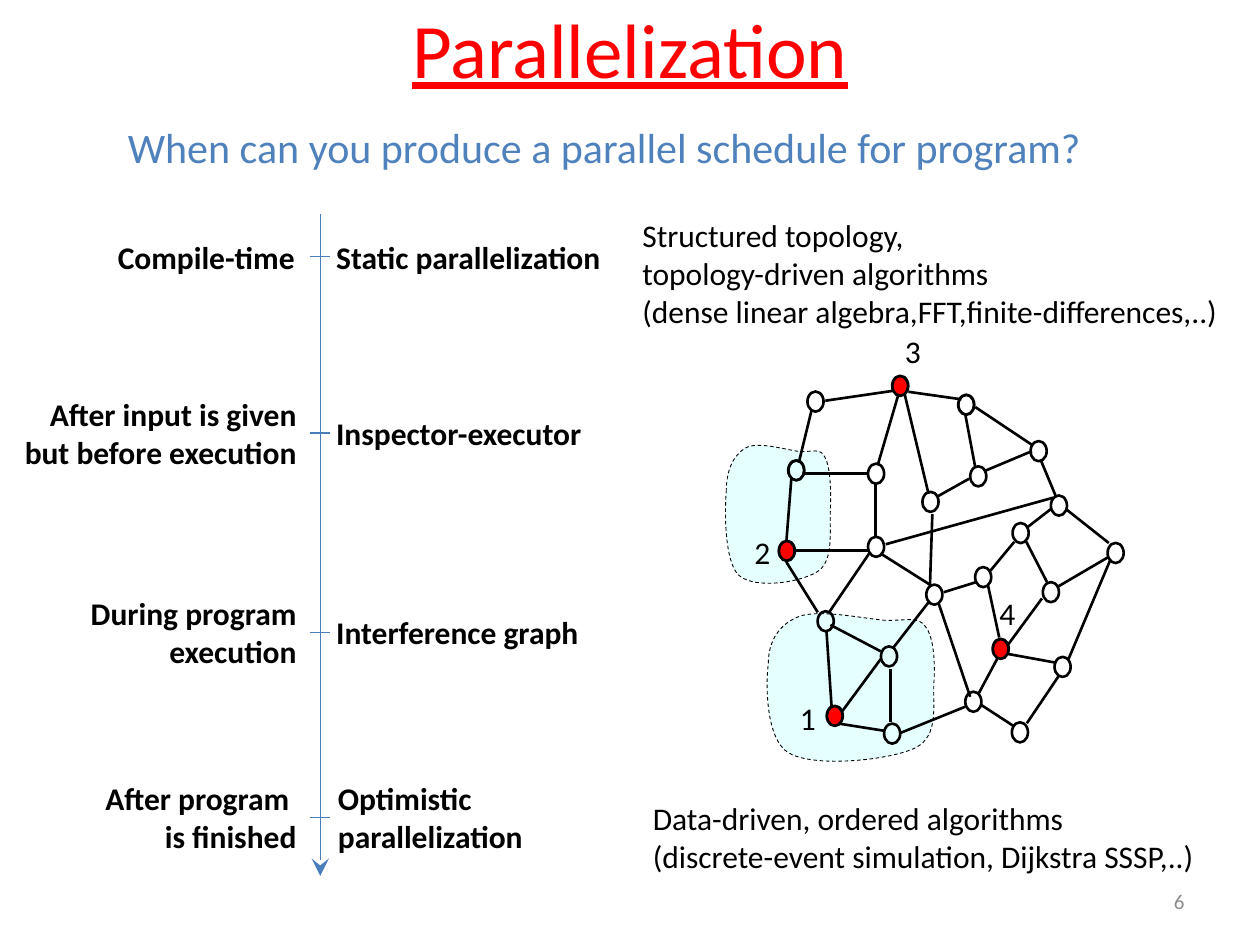
"""Build the slide that relates scheduling time to parallelization technique."""
from dataclasses import dataclass

from lxml import etree
from pptx import Presentation
from pptx.dml.color import RGBColor
from pptx.enum.dml import MSO_LINE
from pptx.enum.shapes import MSO_CONNECTOR, MSO_SHAPE
from pptx.enum.text import MSO_ANCHOR, MSO_AUTO_SIZE, PP_ALIGN
from pptx.oxml.ns import qn
from pptx.util import Pt

LEFT, CENTER, RIGHT = PP_ALIGN.LEFT, PP_ALIGN.CENTER, PP_ALIGN.RIGHT
TOP, MIDDLE = MSO_ANCHOR.TOP, MSO_ANCHOR.MIDDLE
FIT_SHAPE, FIXED = MSO_AUTO_SIZE.SHAPE_TO_FIT_TEXT, MSO_AUTO_SIZE.NONE
STRAIGHT, ELLIPSE, DASH = MSO_CONNECTOR.STRAIGHT, MSO_SHAPE.OVAL, MSO_LINE.DASH


@dataclass(frozen=True)
class Theme:
    font: str = "Calibri"
    title_size: int = 44
    subtitle_size: int = 24
    body_size: int = 18
    number_size: int = 12
    title: str = "FF0000"
    subtitle: str = "4F81BD"
    ink: str = "000000"
    number: str = "8C8C8C"
    timeline: str = "4B7EBC"
    active: str = "FF0000"
    region: str = "00FFFF"
    region_opacity: int = 10


THEME = Theme()
TIMELINE_X = 183
TICK_LEFT, TICK_RIGHT = 177, 188.5
MILESTONES = [
    (146.7, "Compile-time", 60.2, 116.6, LEFT, "Static parallelization", 185, 167),
    (247.5, "After input is given\nbut before execution", 5.6, 171, RIGHT,
     "Inspector-executor", 185, 155.5),
    (361.5, "During program\nexecution", 43.4, 133.2, RIGHT, "Interference graph", 185, 154),
    (467, "After program \nis finished", 51.3, 125.3, RIGHT,
     "Optimistic\nparallelization", 186, 121),
]
NODE_SIZE = (9.2, 11.5)
OVERLAY_SIZE = (8.6, 10.8)
NODES = [
    (455, 268.8), (449.6, 314.8), (500.6, 312.5), (533.9, 339.8),
    (471.8, 355), (508, 375.1), (477, 409.1), (582.8, 418.5),
    (509.8, 419.2), (531.7, 286.8), (561.8, 329.8), (556.2, 401),
    (466, 229.5), (514.4, 220.5), (500.6, 270.7), (552.1, 231.3),
    (559, 272.2), (593.5, 257.8), (571.8, 370.8), (583.2, 304.6),
    (605.1, 288.9), (600.5, 338.4), (607.2, 381.1), (637.5, 316),
]
EDGES = [
    (463.7, 234.7, 456.5, 264.2), (471.6, 229, 511.2, 223.2),
    (459.4, 270.7, 495.4, 270.7), (513.4, 225.4, 501.8, 265),
    (452.2, 273.6, 449.3, 310.3), (449.3, 321.1, 467.3, 349.9),
    (473.8, 349.9, 496.8, 316.1), (453.6, 314.6, 496.1, 314.6),
    (500.4, 276.5, 500.4, 306.7), (517, 225.4, 530.6, 282.2),
    (475.2, 403.9, 472.3, 360.7), (481, 406.8, 503.3, 376.6),
    (474.5, 357.1, 503.3, 372.2), (510.5, 370.1, 530.6, 344.2),
    (504, 316.8, 531.4, 334.1), (478.1, 413.3, 505.4, 417.6),
    (509, 382.3, 509, 412.6), (514.1, 419, 551.5, 403.9),
    (519.1, 223.9, 549.4, 228.2), (551.5, 236.2, 557.3, 267.1),
    (535.7, 283.7, 553.7, 273.6), (557.3, 232.6, 589.7, 254.2),
    (539.3, 338.4, 558, 332.6), (532.8, 293.8, 531.4, 335.5),
    (565.9, 326.2, 579.6, 309.6), (559.4, 396, 570.2, 375.8),
    (560.2, 402.5, 578.9, 414.7), (564.5, 334.1, 571, 364.3),
    (575.3, 369.4, 595.4, 342), (586.1, 308.9, 598.3, 332.6),
    (562.3, 269.3, 589.7, 257.8), (604.1, 335.5, 633.6, 318.2),
    (587.5, 301, 600.5, 290.9), (594.7, 262.8, 603.4, 283.7),
    (609.1, 290.9, 633.6, 310.3), (586.8, 413.3, 604.8, 386.6),
    (610.6, 376.6, 634.3, 320.4), (576, 373.7, 603.4, 378.7),
    (536.4, 344.9, 554.4, 398.2), (506.2, 311, 601.9, 284.4),
]
OVERLAYS = [(0, None), (6, THEME.active), (18, THEME.active),
            (15, None), (1, THEME.active), (13, THEME.active)]
NODE_LABELS = [("1", 450, 396), ("2", 424, 301), ("3", 510, 186), ("4", 564, 336)]
REGION_CURVE = [
    (1, 29), (1, 17), (5, 8), (12, 4), (19, 0), (35, 5), (42.5, 6),
    (50, 6.5), (55, 3.5), (57.5, 9.5), (60.5, 15), (61, 29), (60.5, 39.5),
    (60, 50.5), (62.5, 67.5), (54, 74), (45.5, 80.5), (18, 85), (8.5, 77),
    (0, 70), (0, 40), (1, 29),
]
REGIONS = [(414, 252, 1, 1), (437.5, 348, 1.59, 1.07)]


def text_height(text):
    return 7 + 22 * len(text.split("\n"))


class SlideBuilder:
    def __init__(self, slide, theme):
        self.slide = slide
        self.theme = theme

    def text(self, text, left, top, width, height=None, size=None, color=None,
             bold=False, underline=False, align=LEFT, anchor=TOP, wrap=False):
        shape = self.slide.shapes.add_textbox(
            Pt(left), Pt(top), Pt(width), Pt(height or text_height(text)))
        frame = shape.text_frame
        frame.word_wrap = wrap
        frame.auto_size = FIXED if wrap else FIT_SHAPE
        frame.vertical_anchor = anchor
        frame.text = text
        for paragraph in frame.paragraphs:
            paragraph.alignment = align
            font = paragraph.runs[0].font
            font.name = self.theme.font
            font.size = Pt(size or self.theme.body_size)
            font.bold = bold
            font.underline = underline
            font.color.rgb = RGBColor.from_string(color or self.theme.ink)

    def line(self, ends, color, width, arrow=False):
        connector = self.slide.shapes.add_connector(STRAIGHT, *(Pt(value) for value in ends))
        connector.line.color.rgb = RGBColor.from_string(color)
        connector.line.width = Pt(width)
        properties = connector._element.spPr
        if arrow:
            etree.SubElement(properties.find(qn("a:ln")), qn("a:tailEnd"),
                             type="stealth", w="lg", len="lg")
        etree.SubElement(properties, qn("a:effectLst"))

    def outline(self, shape, width, fill=None):
        shape.shadow.inherit = False
        shape.line.color.rgb = RGBColor.from_string(self.theme.ink)
        shape.line.width = Pt(width)
        if fill:
            shape.fill.solid()
            shape.fill.fore_color.rgb = RGBColor.from_string(fill)
        else:
            shape.fill.background()

    def node(self, center, size, line_width, fill=None):
        corner = [middle - extent / 2 for middle, extent in zip(center, size)]
        shape = self.slide.shapes.add_shape(ELLIPSE, *(Pt(value) for value in (*corner, *size)))
        self.outline(shape, line_width, fill)

    def region(self, left, top, scale_x, scale_y):
        points = [(Pt(left + x * scale_x), Pt(top + y * scale_y)) for x, y in REGION_CURVE]
        freeform = self.slide.shapes.build_freeform(*points[0])
        freeform.add_line_segments(points[1:], close=True)
        shape = freeform.convert_to_shape()
        segments = list(shape._element.iter(qn("a:lnTo")))
        for first in range(0, len(points) - 1, 3):
            curve = etree.Element(qn("a:cubicBezTo"))
            segments[first].addprevious(curve)
            for segment in segments[first:first + 3]:
                curve.append(segment[0])
                segment.getparent().remove(segment)
        self.outline(shape, 0.5, self.theme.region)
        shape.line.dash_style = DASH
        color = shape._element.spPr.find(qn("a:solidFill"))[0]
        etree.SubElement(color, qn("a:alpha"), val=str(self.theme.region_opacity * 1000))


def add_timeline(builder):
    for y, moment, left, width, align, technique, technique_left, technique_width in MILESTONES:
        builder.line((TICK_LEFT, y, TICK_RIGHT, y), THEME.timeline, 0.75)
        builder.text(moment, left, y - text_height(moment) / 2, width, bold=True, align=align)
        builder.text(technique, technique_left, y - text_height(technique) / 2,
                     technique_width, bold=True)
    builder.line((TIMELINE_X, 122.5, TIMELINE_X, 500.5), THEME.timeline, 0.75, arrow=True)


def add_graph(builder):
    for region in REGIONS:
        builder.region(*region)
    for center in NODES:
        builder.node(center, NODE_SIZE, 1.5)
    for ends in EDGES:
        builder.line(ends, THEME.ink, 1.5)
    for index, fill in OVERLAYS:
        builder.node(NODES[index], OVERLAY_SIZE, 1, fill)
    for label, left, top in NODE_LABELS:
        builder.text(label, left, top, 23.5)


def main():
    presentation = Presentation()
    presentation.slide_width, presentation.slide_height = Pt(720), Pt(540)
    slide = presentation.slides.add_slide(presentation.slide_layouts[6])
    builder = SlideBuilder(slide, THEME)
    builder.text("Parallelization", 36, -18, 648, 90, size=THEME.title_size, color=THEME.title,
                 underline=True, align=CENTER, anchor=MIDDLE, wrap=True)
    builder.text("When can you produce a parallel schedule for program?", 66, 66, 564.5, 36,
                 size=THEME.subtitle_size, color=THEME.subtitle)
    add_timeline(builder)
    builder.text("Structured topology,\ntopology-driven algorithms\n"
                 "(dense linear algebra,FFT,finite-differences,..)", 360, 120, 347)
    add_graph(builder)
    builder.text("Data-driven, ordered algorithms\n"
                 "(discrete-event simulation, Dijkstra SSSP,..)", 366, 453, 327)
    builder.text("6", 516, 500.5, 168, 29, size=THEME.number_size, color=THEME.number,
                 align=RIGHT, anchor=MIDDLE, wrap=True)
    presentation.save("out.pptx")


if __name__ == "__main__":
    main()
